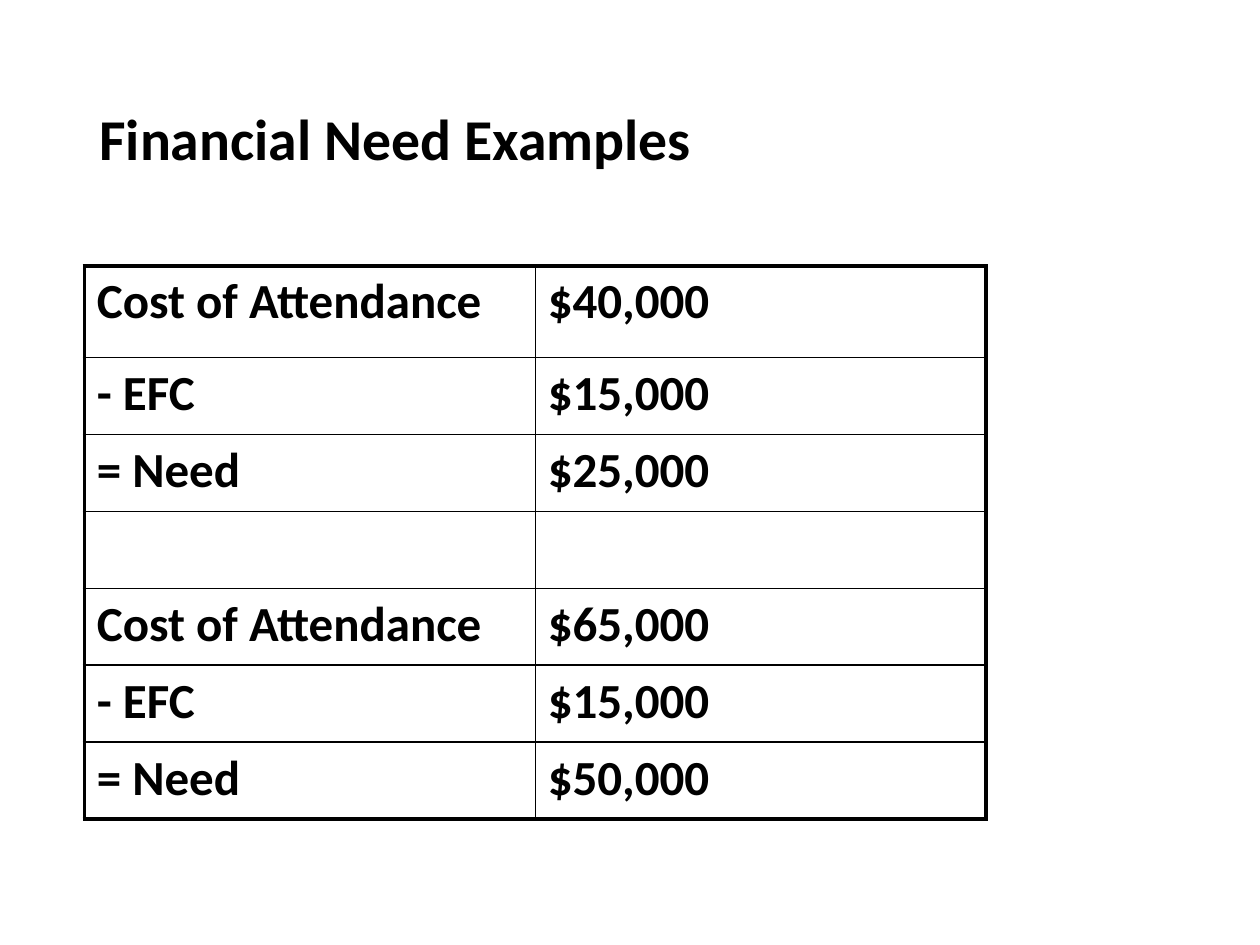
from dataclasses import dataclass

from lxml import etree
from pptx import Presentation
from pptx.dml.color import RGBColor
from pptx.enum.text import MSO_ANCHOR, MSO_AUTO_SIZE, PP_ALIGN
from pptx.oxml.ns import qn
from pptx.util import Cm, Pt

LEFT = PP_ALIGN.LEFT
MIDDLE = MSO_ANCHOR.MIDDLE
NO_FIT = MSO_AUTO_SIZE.NONE

FONT = "Calibri"
HEX = {"ink": "000000"}
THICK, THIN = Pt(2.25), Pt(1)


@dataclass
class Case:
    cost: str
    efc: str
    need: str

    def rows(self) -> list[tuple[str, str]]:
        return [
            ("Cost of Attendance", self.cost),
            ("- EFC", self.efc),
            ("= Need", self.need),
        ]


CASES = [
    Case("$40,000", "$15,000", "$25,000"),
    Case("$65,000", "$15,000", "$50,000"),
]


def style(frame, size: float) -> None:
    """Format every run of a text frame."""
    for para in frame.paragraphs:
        para.alignment = LEFT
        for run in para.runs:
            font = run.font
            font.name, font.size, font.bold = FONT, Pt(size), True
            font.color.rgb = RGBColor.from_string(HEX["ink"])


def rule(cell, edges: dict[str, bool]) -> None:
    """Draw cell borders, thick where the edge is on the outside."""
    props = cell._tc.get_or_add_tcPr()
    for spot, (side, outer) in enumerate(edges.items()):
        line = etree.Element(qn(f"a:ln{side}"), w=str(THICK if outer else THIN))
        fill = etree.SubElement(line, qn("a:solidFill"))
        etree.SubElement(fill, qn("a:srgbClr"), val=HEX["ink"])
        props.insert(spot, line)


def add_title(slide, text: str) -> None:
    title = slide.shapes.title
    title.left, title.top = Cm(1.75), Cm(1.02)
    title.width, title.height = Cm(21.9), Cm(3.68)
    frame = title.text_frame
    frame.text = text
    frame.auto_size = NO_FIT
    frame.vertical_anchor = MIDDLE
    frame.paragraphs[0].line_spacing = 0.9
    style(frame, 33)


def add_grid(slide, rows: list[tuple[str, str]]) -> None:
    first, other, wide = Cm(1.85), Cm(1.55), Cm(9.09)
    last = len(rows) - 1
    table = slide.shapes.add_table(
        len(rows), 2, Cm(1.7), Cm(5.36), 2 * wide, first + last * other
    ).table
    table.first_row = table.horz_banding = False
    for col in table.columns:
        col.width = wide
    for r, texts in enumerate(rows):
        table.rows[r].height = other if r else first
        for c, text in enumerate(texts):
            cell = table.cell(r, c)
            cell.fill.background()
            cell.text_frame.text = text
            style(cell.text_frame, 28)
            rule(cell, {"L": c == 0, "R": c == 1, "T": r == 0, "B": r == last})


def main() -> None:
    deck = Presentation()
    deck.slide_width, deck.slide_height = Cm(25.4), Cm(19.05)
    slide = deck.slides.add_slide(deck.slide_layouts[5])

    # Heading
    add_title(slide, "Financial Need Examples")

    # Both cases, with an empty row between them
    one, two = CASES
    add_grid(slide, one.rows() + [("", "")] + two.rows())

    deck.save("out.pptx")


if __name__ == "__main__":
    main()
